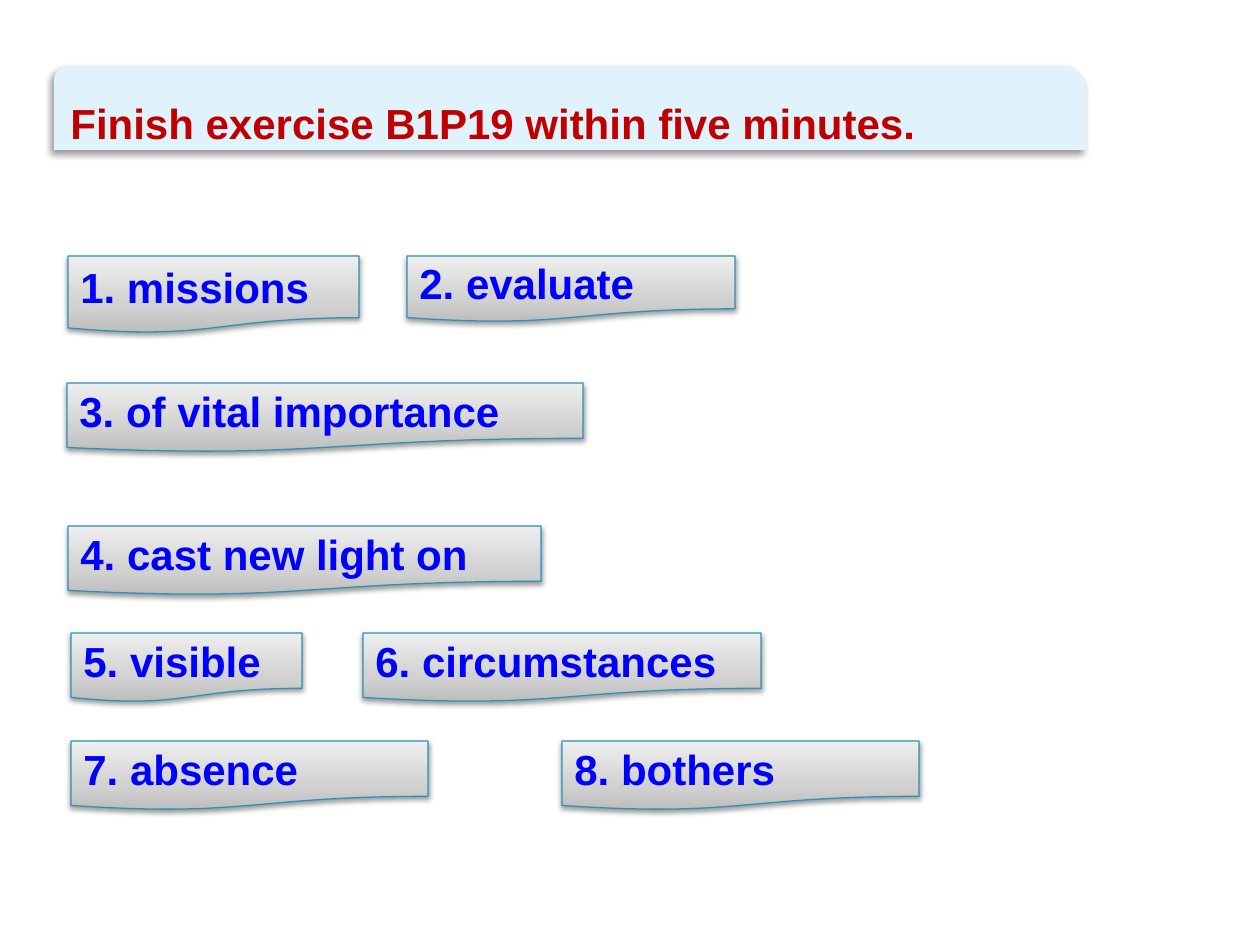
from lxml import etree
from pptx import Presentation
from pptx import util as u
from pptx.dml.color import RGBColor
from pptx.enum import shapes, text
from pptx.oxml import ns

PX = 914400 / 126
INK = "0000FF"
EDGE = "2D91B9"
GREYS = [(0, "BDBDBD"), (35, "D1D1D1"), (100, "EEEEEE")]

# Answer label boxes: text, left, top, width, height
ANSWERS = [
    ("1. missions", 68, 256, 291, 77),
    ("2. evaluate", 407, 256, 328, 66),
    ("3. of vital importance", 67, 383, 516, 69),
    ("4. cast new light on", 68, 526, 473, 69),
    ("5. visible", 71, 633, 231, 69),
    ("6. circumstances", 363, 633, 398, 69),
    ("7. absence", 71, 741, 357, 69),
    ("8. bothers", 562, 741, 357, 69),
]


def px(n):
    return u.Emu(round(n * PX))


def rgb(code):
    return RGBColor.from_string(code)


def add_color(parent, code, alpha=None):
    clr = etree.SubElement(parent, ns.qn("a:srgbClr"), val=code)
    if alpha is not None:
        etree.SubElement(clr, ns.qn("a:alpha"), val=str(alpha * 1000))


def add_shadow(sp, alpha, blur, dist, angle):
    sp.shadow.inherit = False
    effects = sp._element.spPr.find(ns.qn("a:effectLst"))
    shadow = etree.SubElement(
        effects, ns.qn("a:outerShdw"), blurRad=str(u.Pt(blur)),
        dist=str(u.Pt(dist)), dir=str(angle * 60000), rotWithShape="0")
    add_color(shadow, "000000", alpha)


def fill_gradient(sp, stops, angle):
    sp.fill.gradient()
    sp.fill.gradient_angle = angle
    stop_list = sp._element.spPr.find(".//" + ns.qn("a:gsLst"))
    for old in list(stop_list):
        stop_list.remove(old)
    for pos, code in stops:
        stop = etree.SubElement(stop_list, ns.qn("a:gs"), pos=str(pos * 1000))
        add_color(stop, code)


def add_box(s, kind, box):
    return s.shapes.add_shape(kind, *(px(n) for n in box))


def put_text(sp, words, color, size=24, spacing=None):
    tf = sp.text_frame
    tf.word_wrap = True
    tf.vertical_anchor = text.MSO_ANCHOR.MIDDLE
    p = tf.paragraphs[0]
    p.alignment = text.PP_ALIGN.LEFT
    if spacing:
        p.line_spacing = spacing
    r = p.add_run()
    r.text = words
    r.font.name = "Arial"
    r.font.size = u.Pt(size)
    r.font.bold = True
    r.font.color.rgb = rgb(color)


def add_title(s, words, box):
    sp = add_box(s, shapes.MSO_SHAPE.SNIP_ROUND_RECTANGLE, box)
    sp.fill.solid()
    sp.fill.fore_color.rgb = rgb("E0F2FC")
    sp.line.fill.background()
    add_shadow(sp, alpha=40, blur=4, dist=3, angle=135)
    put_text(sp, words, "C00000", spacing=1.5)


def add_answer(s, words, box):
    sp = add_box(s, shapes.MSO_SHAPE.FLOWCHART_DOCUMENT, box)
    fill_gradient(sp, GREYS, 90)  # darkest at the bottom
    sp.line.color.rgb = rgb(EDGE)
    sp.line.width = u.Pt(0.75)
    add_shadow(sp, alpha=38, blur=3.1, dist=1.6, angle=90)
    put_text(sp, words, INK)


def main():
    prs = Presentation()
    prs.slide_width, prs.slide_height = px(1260), px(945)
    s = prs.slides.add_slide(prs.slide_layouts[6])

    # Title band
    add_title(s, "Finish exercise B1P19 within five minutes.",
              (54, 66, 1032, 84))

    # Answer labels
    for words, *box in ANSWERS:
        add_answer(s, words, box)

    prs.save("out.pptx")


if __name__ == "__main__":
    main()
